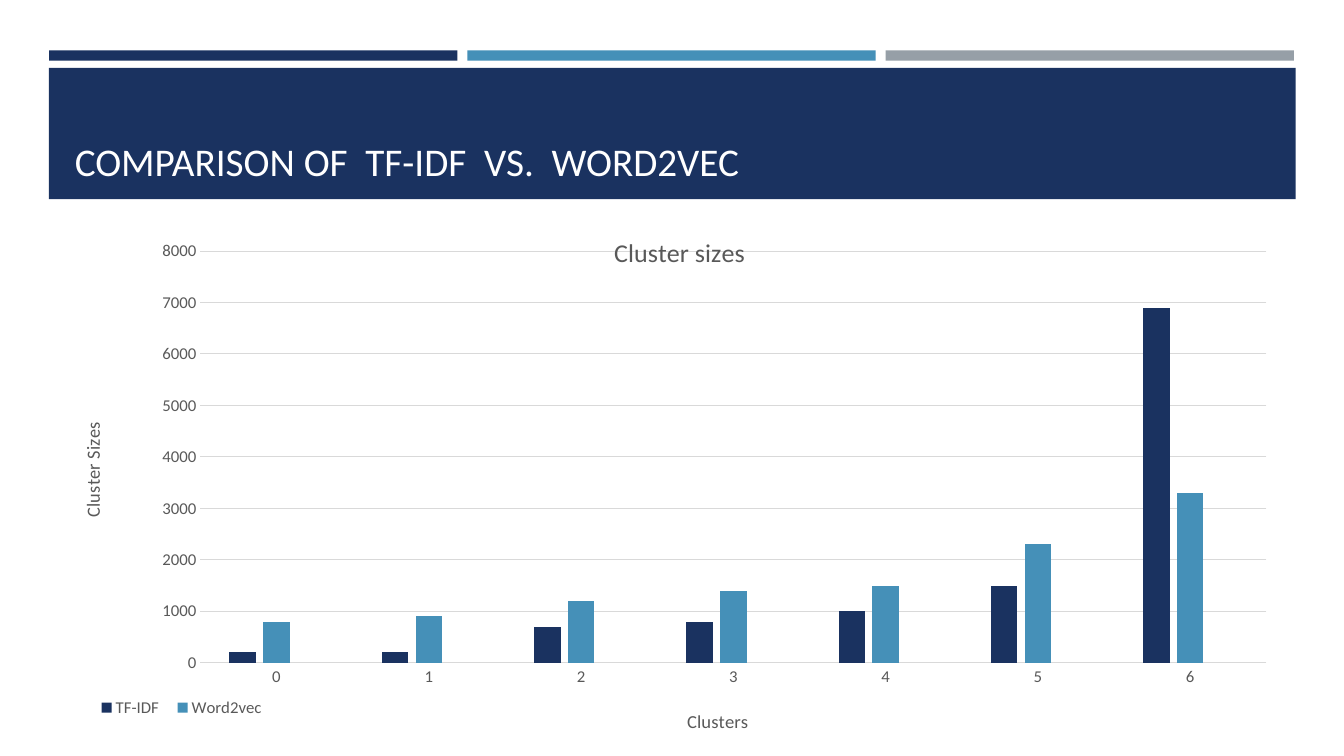
from dataclasses import dataclass

from lxml.etree import SubElement
from pptx import Presentation
from pptx.chart.data import CategoryChartData
from pptx.dml.color import RGBColor
from pptx.enum.chart import XL_CHART_TYPE, XL_LEGEND_POSITION, XL_TICK_MARK
from pptx.enum.shapes import MSO_SHAPE
from pptx.enum.text import MSO_ANCHOR, MSO_AUTO_SIZE, PP_ALIGN
from pptx.oxml.ns import qn
from pptx.oxml.xmlchemy import OxmlElement
from pptx.util import Cm, Pt

NAVY, BLUE, GRAY = "1A3260", "4590B8", "969FA7"
WHITE, TEXT_GRAY, GRID_GRAY = "FFFFFF", "595959", "D9D9D9"


@dataclass
class Band:
    left: float
    top: float
    width: float
    height: float
    color: str


@dataclass
class ClusterSeries:
    name: str
    sizes: list
    color: str


@dataclass
class ChartLabel:
    owner: object
    text: str
    size: float
    parent_tag: str
    left: float
    top: float


STRIPE_WIDTH, STRIPE_PITCH = 10.29, 10.54
BANDS = [
    Band(1.24 + index * STRIPE_PITCH, 1.27, STRIPE_WIDTH, 0.26, color)
    for index, color in enumerate([NAVY, BLUE, GRAY])
] + [Band(1.23, 1.71, 31.42, 3.31, NAVY)]

# The empty third series keeps its slot in every cluster
SERIES = [
    ClusterSeries("TF-IDF", [200, 200, 700, 800, 1000, 1500, 6900], NAVY),
    ClusterSeries("Word2vec", [800, 900, 1200, 1400, 1500, 2300, 3300], BLUE),
    ClusterSeries("Series 3", [None] * 7, "45CBE8"),
]


def rgb(color: str) -> RGBColor:
    return RGBColor.from_string(color)


def format_font(font, size: float, color: str) -> None:
    values = {"name": "Calibri", "size": Pt(size), "bold": False}
    for name, value in values.items():
        setattr(font, name, value)
    font.color.rgb = rgb(color)


def draw_band(slide, band: Band) -> None:
    shape = slide.shapes.add_shape(
        MSO_SHAPE.RECTANGLE,
        Cm(band.left), Cm(band.top), Cm(band.width), Cm(band.height),
    )
    shape.shadow.inherit = False
    shape.fill.solid()
    shape.fill.fore_color.rgb = rgb(band.color)
    shape.line.fill.background()


def place(parent, successor_tag: str, **settings) -> None:
    """Give a chart part a manual layout just before its successor element."""
    for old_layout in parent.findall(qn("c:layout")):
        parent.remove(old_layout)
    layout = OxmlElement("c:layout")
    manual = SubElement(layout, qn("c:manualLayout"))
    for name, value in settings.items():
        SubElement(manual, qn(f"c:{name}")).set("val", str(value))
    parent.find(qn(successor_tag)).addprevious(layout)


def draw_title(slide) -> None:
    title = slide.shapes.title
    bounds = {"left": 1.63, "top": 1.96, "width": 30.63, "height": 2.82}
    for name, value in bounds.items():
        setattr(title, name, Cm(value))
    frame = title.text_frame
    frame.text = "COMPARISON OF  TF-IDF  VS.  WORD2VEC"
    settings = {
        "vertical_anchor": MSO_ANCHOR.BOTTOM,
        "word_wrap": True,
        "auto_size": MSO_AUTO_SIZE.NONE,
    }
    for name, value in settings.items():
        setattr(frame, name, value)
    paragraph = frame.paragraphs[0]
    paragraph.alignment = PP_ALIGN.LEFT
    paragraph.line_spacing = 0.9
    format_font(paragraph.runs[0].font, 28, WHITE)
    # Bring the title in front of its banner
    title.element.getparent().append(title.element)


def draw_chart(slide) -> None:
    data = CategoryChartData()
    data.categories = [str(cluster) for cluster in range(7)]
    for series in SERIES:
        data.add_series(series.name, series.sizes)
    chart = slide.shapes.add_chart(
        XL_CHART_TYPE.COLUMN_CLUSTERED,
        Cm(1.3), Cm(5.13), Cm(31.24), Cm(13.49), data,
    ).chart
    format_font(chart.font, 12, TEXT_GRAY)

    # Columns
    plot = chart.plots[0]
    for name, value in {"gap_width": 219, "overlap": -27, "vary_by_categories": False}.items():
        setattr(plot, name, value)
    for drawn, series in zip(plot.series, SERIES):
        drawn.format.fill.solid()
        drawn.format.fill.fore_color.rgb = rgb(series.color)

    # Axes
    category_axis, value_axis = chart.category_axis, chart.value_axis
    for axis in (category_axis, value_axis):
        axis.major_tick_mark = axis.minor_tick_mark = XL_TICK_MARK.NONE
        format_font(axis.tick_labels.font, 12, TEXT_GRAY)
    scale = {"minimum_scale": 0, "maximum_scale": 8000, "major_unit": 1000,
             "has_major_gridlines": True}
    for name, value in scale.items():
        setattr(value_axis, name, value)
    value_axis.format.line.fill.background()
    for line in (category_axis.format.line, value_axis.major_gridlines.format.line):
        line.color.rgb = rgb(GRID_GRAY)
        line.width = Pt(0.75)

    # Chart and axis titles
    labels = [
        ChartLabel(chart.chart_title, "Cluster sizes", 18.6, "c:chart", 0.45, 0.05),
        ChartLabel(category_axis.axis_title, "Clusters", 13.3, "c:catAx", 0.51, 0.95),
        ChartLabel(value_axis.axis_title, "Cluster Sizes", 13.3, "c:valAx", 0.02, 0.41),
    ]
    for label in labels:
        label.owner.text_frame.text = label.text
        run = label.owner.text_frame.paragraphs[0].runs[0]
        format_font(run.font, label.size, TEXT_GRAY)
        title = chart.element.find(f".//{qn(label.parent_tag)}/{qn('c:title')}")
        place(title, "c:overlay", xMode="edge", yMode="edge", x=label.left, y=label.top)
    chart.element.find(f".//{qn('c:chart')}/{qn('c:title')}/{qn('c:overlay')}").set("val", "1")

    # Legend without the empty series
    chart.has_legend = True
    chart.legend.position = XL_LEGEND_POSITION.BOTTOM
    chart.legend.include_in_layout = False
    format_font(chart.legend.font, 12, TEXT_GRAY)
    legend = chart.element.find(f".//{qn('c:legend')}")
    place(legend, "c:overlay", xMode="edge", yMode="edge", x=0.03, y=0.93, w=0.15, h=0.05)
    entry = OxmlElement("c:legendEntry")
    for tag, value in (("c:idx", "2"), ("c:delete", "1")):
        SubElement(entry, qn(tag)).set("val", value)
    legend.find(qn("c:legendPos")).addnext(entry)

    # Plot area
    place(chart.element.find(f".//{qn('c:plotArea')}"), "c:barChart",
          layoutTarget="inner", xMode="edge", yMode="edge",
          x=0.12, y=0.09, w=0.86, h=0.78)


def main() -> None:
    presentation = Presentation()
    presentation.slide_width, presentation.slide_height = Cm(33.87), Cm(19.05)
    slide = presentation.slides.add_slide(presentation.slide_layouts[5])
    for band in BANDS:
        draw_band(slide, band)
    draw_title(slide)
    draw_chart(slide)
    presentation.save("out.pptx")


if __name__ == "__main__":
    main()
